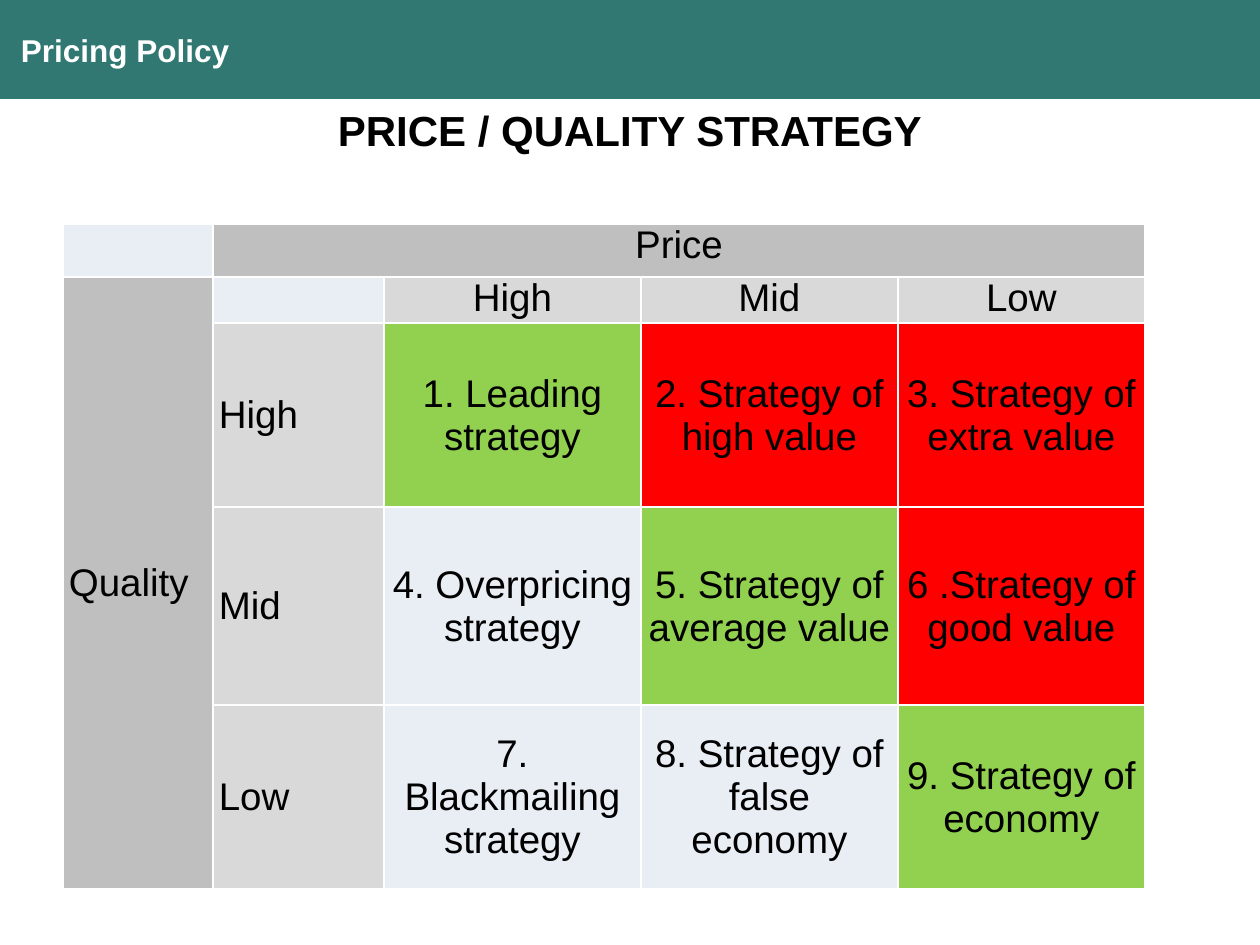
from dataclasses import dataclass

from lxml import etree
from pptx import Presentation
from pptx import util as u
from pptx.dml.color import RGBColor
from pptx.enum import shapes, text
from pptx.oxml.ns import qn

PX = 914400 / 126
CENTER, JUSTIFY = text.PP_ALIGN.CENTER, text.PP_ALIGN.JUSTIFY
TOP, MIDDLE = text.MSO_ANCHOR.TOP, text.MSO_ANCHOR.MIDDLE


@dataclass(frozen=True)
class Theme:
    font: str = "Arial"
    banner: str = "307871"
    white: str = "FFFFFF"
    ink: str = "000000"
    axis: str = "BFBFBF"
    level: str = "D9D9D9"
    plain: str = "E9EDF4"
    fair: str = "92D050"
    good: str = "FF0000"
    banner_size: int = 18
    title_size: int = 24
    cell_size: int = 22


def px(n):
    return u.Emu(round(n * PX))


def assign(obj, values):
    for name, value in values.items():
        setattr(obj, name, value)


class Deck:
    def __init__(self, theme, width, height):
        self.theme = theme
        self.prs = Presentation()
        assign(self.prs, {"slide_width": px(width), "slide_height": px(height)})
        self.s = self.prs.slides.add_slide(self.prs.slide_layouts[6])

    def paint(self, obj, color):
        obj.fill.solid()
        obj.fill.fore_color.rgb = RGBColor.from_string(color)

    def label(self, tf, words, size, color, align, bold=False):
        p = tf.paragraphs[0]
        p.alignment = align
        r = p.add_run()
        r.text = words
        assign(r.font, {"name": self.theme.font, "size": u.Pt(size), "bold": bold})
        r.font.color.rgb = RGBColor.from_string(color)

    def banner(self, words, x, y, w, h, inset):
        sp = self.s.shapes.add_shape(shapes.MSO_SHAPE.RECTANGLE, px(x), px(y), px(w), px(h))
        sp.shadow.inherit = False
        self.paint(sp, self.theme.banner)
        sp.line.fill.background()
        assign(sp.text_frame, {"margin_left": px(inset), "vertical_anchor": MIDDLE})
        self.label(sp.text_frame, words, self.theme.banner_size, self.theme.white,
                   text.PP_ALIGN.LEFT, True)

    def title(self, words, x, y, w, h):
        tf = self.s.shapes.add_textbox(px(x), px(y), px(w), px(h)).text_frame
        tf.word_wrap = True
        self.label(tf, words, self.theme.title_size, self.theme.ink, CENTER, True)

    def border(self, cell):
        tc_pr = cell._tc.get_or_add_tcPr()
        for i, side in enumerate(("lnL", "lnR", "lnT", "lnB")):
            ln = etree.Element(qn(f"a:{side}"), w=str(u.Pt(1)))
            fill = etree.SubElement(ln, qn("a:solidFill"))
            etree.SubElement(fill, qn("a:srgbClr"), val=self.theme.white)
            tc_pr.insert(i, ln)

    def cell(self, cell, words, fill, align, anchor):
        assign(cell, {"margin_left": px(6), "margin_right": px(6), "margin_top": 0,
                      "margin_bottom": 0, "vertical_anchor": anchor})
        self.paint(cell, fill)
        self.border(cell)
        if words:
            self.label(cell.text_frame, words, self.theme.cell_size, self.theme.ink, align)

    def table(self, x, y, cols, rows, cells, merges):
        frame = self.s.shapes.add_table(len(rows), len(cols), px(x), px(y),
                                        px(sum(cols)), px(sum(rows)))
        table = frame.table
        assign(table, {"first_row": False, "horz_banding": False})
        for col, width in zip(table.columns, cols):
            col.width = px(width)
        for row, height in zip(table.rows, rows):
            row.height = px(height)
        for r, line in enumerate(cells):
            for c, (words, fill) in enumerate(line):
                align = JUSTIFY if c < 2 and r else CENTER
                anchor = MIDDLE if r > 1 or c == 0 else TOP
                self.cell(table.cell(r, c), words, fill, align, anchor)
        for first, last in merges:
            table.cell(*first).merge(table.cell(*last))


def main():
    t = Theme()
    deck = Deck(t, 1260, 945)
    deck.banner("Pricing Policy", 0, 0, 1260, 99, 21)
    deck.title("PRICE / QUALITY STRATEGY", 47, 98, 1166, 63)

    levels = ["High", "Mid", "Low"]
    strategies = [
        [("1. Leading strategy", t.fair), ("2. Strategy of high value", t.good),
         ("3. Strategy of extra value", t.good)],
        [("4. Overpricing strategy", t.plain), ("5. Strategy of average value", t.fair),
         ("6 .Strategy of good value", t.good)],
        [("7. Blackmailing strategy", t.plain), ("8. Strategy of false economy", t.plain),
         ("9. Strategy of economy", t.fair)],
    ]
    blank, covered = ("", t.plain), ("", t.axis)
    cells = [
        [blank, ("Price", t.axis)] + [covered] * 3,
        [("Quality", t.axis), blank] + [(level, t.level) for level in levels],
    ]
    cells += [[covered, (level, t.level)] + line for level, line in zip(levels, strategies)]
    deck.table(63, 224, [150, 171, 257, 257, 247], [53, 46, 184, 198, 184], cells,
               [((0, 1), (0, 4)), ((1, 0), (4, 0))])
    deck.prs.save("out.pptx")


if __name__ == "__main__":
    main()
